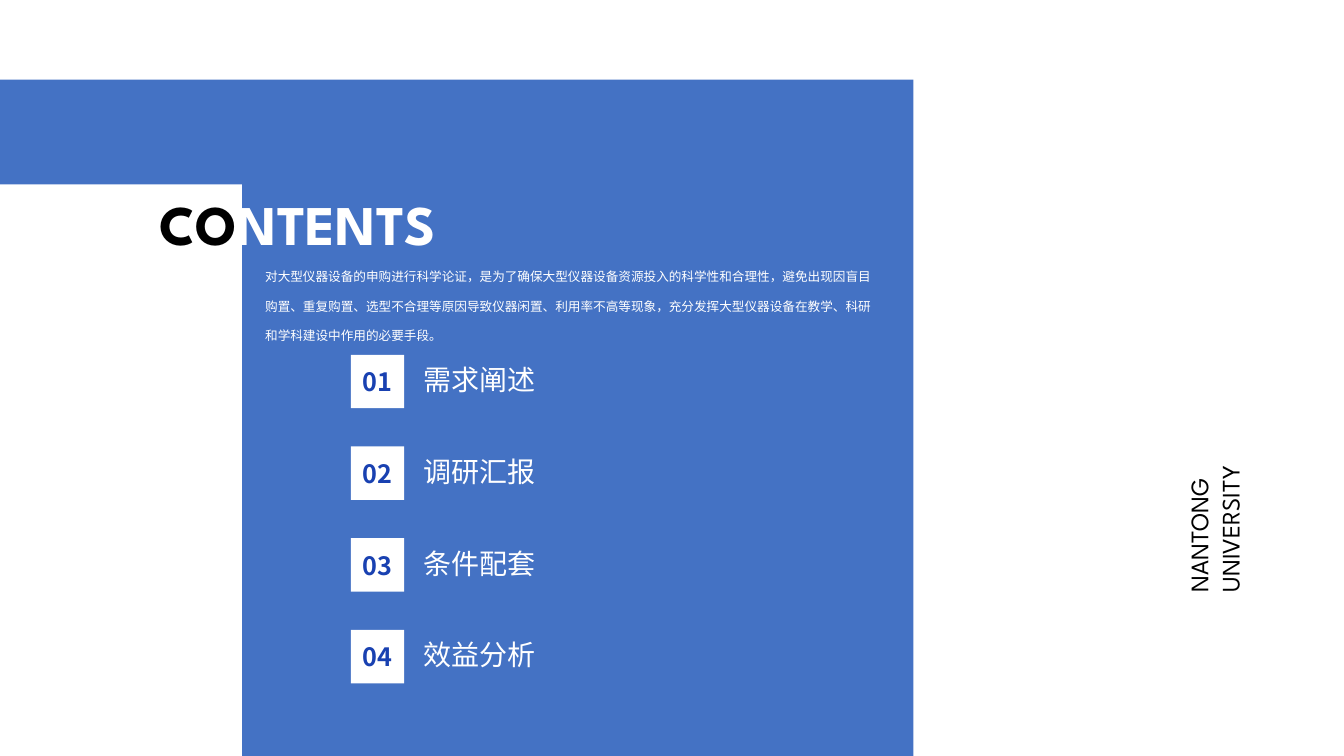
from lxml.etree import SubElement
from pptx import Presentation
from pptx.dml.color import RGBColor
from pptx.enum.shapes import MSO_SHAPE as Preset
from pptx.enum.text import MSO_ANCHOR as Anchor, MSO_AUTO_SIZE as AutoSize, PP_ALIGN as Align
from pptx.oxml.ns import qn
from pptx.util import Inches, Pt

BLUE = RGBColor(0x44, 0x72, 0xC4)
NUMBER_BLUE = RGBColor(0x19, 0x41, 0xB1)
WHITE = RGBColor(0xFF, 0xFF, 0xFF)
BLACK = RGBColor(0x00, 0x00, 0x00)
LATIN_FONT = "League Spartan"
CHINESE_FONT = "Noto Sans CJK SC"

INTRODUCTION = (
    "对大型仪器设备的申购进行科学论证，是为了确保大型仪器设备资源投入的科学性和合理性，"
    "避免出现因盲目购置、重复购置、选型不合理等原因导致仪器闲置、利用率不高等现象，"
    "充分发挥大型仪器设备在教学、科研和学科建设中作用的必要手段。"
)
SECTIONS = ["需求阐述", "调研汇报", "条件配套", "效益分析"]


def add_block(left, top, width, height, color):
    shape = slide.shapes.add_shape(
        Preset.RECTANGLE, Inches(left), Inches(top), Inches(width), Inches(height))
    shape.shadow.inherit = False
    shape.fill.solid()
    shape.fill.fore_color.rgb = color
    shape.line.fill.background()
    return shape


def format_run(run, size, font_name, color, bold=False):
    run.font.size = Pt(size)
    run.font.name = font_name
    run.font.color.rgb = color
    run.font.bold = bold
    east_asian = SubElement(run.font._element, qn("a:ea"))
    east_asian.set("typeface", CHINESE_FONT)


presentation = Presentation()
presentation.slide_width = Inches(13.33)
presentation.slide_height = Inches(7.5)
slide = presentation.slides.add_slide(presentation.slide_layouts[5])

# Blue panel with a white corner
add_block(0, 0.79, 9.06, 6.71, BLUE)
add_block(0, 1.83, 2.4, 5.67, WHITE)

# Title, brought in front of the panel
title = slide.shapes.title
slide.shapes._spTree.append(title._element)
title.left, title.top = Inches(1.58), Inches(1.82)
title.width, title.height = Inches(2.79), Inches(0.72)
frame = title.text_frame
frame.margin_left = frame.margin_top = frame.margin_right = 0
frame.margin_bottom = Inches(0.05)
frame.vertical_anchor = Anchor.TOP
frame.word_wrap = False
frame.auto_size = AutoSize.SHAPE_TO_FIT_TEXT
paragraph = frame.paragraphs[0]
paragraph.alignment = Align.LEFT
paragraph.line_spacing = Pt(52)
for part, color in [("CO", BLACK), ("NTENTS", WHITE)]:
    run = paragraph.add_run()
    run.text = part
    format_run(run, 40, LATIN_FONT, color, bold=True)

# Introduction
introduction = slide.shapes.add_textbox(Inches(2.63), Inches(2.53), Inches(6.11), Inches(0.93))
frame = introduction.text_frame
frame.margin_left = frame.margin_top = frame.margin_right = 0
frame.margin_bottom = Inches(0.05)
frame.word_wrap = True
frame.text = INTRODUCTION
paragraph = frame.paragraphs[0]
paragraph.line_spacing = Pt(21)
format_run(paragraph.runs[0], 9, CHINESE_FONT, WHITE)

# Numbered sections
for index, section in enumerate(SECTIONS):
    top = 3.52 + index * 0.91
    number = add_block(3.48, top, 0.53, 0.53, WHITE)
    frame = number.text_frame
    frame.vertical_anchor = Anchor.MIDDLE
    frame.text = f"{index + 1:02d}"
    frame.paragraphs[0].alignment = Align.CENTER
    format_run(frame.paragraphs[0].runs[0], 18, CHINESE_FONT, NUMBER_BLUE, bold=True)

    label = slide.shapes.add_textbox(Inches(4.1), Inches(top + 0.03), Inches(3.51), Inches(0.44))
    label.text_frame.word_wrap = True
    label.text_frame.text = section
    format_run(label.text_frame.paragraphs[0].runs[0], 20, "Arial", WHITE)

# University name, reading upwards
for left, word in [(10.84, "NANTONG"), (11.15, "UNIVERSITY")]:
    name = slide.shapes.add_textbox(Inches(left), Inches(4.73), Inches(2.09), Inches(0.4))
    name.rotation = 270
    name.text_frame.word_wrap = True
    name.text_frame.text = word
    format_run(name.text_frame.paragraphs[0].runs[0], 18, LATIN_FONT, BLACK)

presentation.save("out.pptx")
